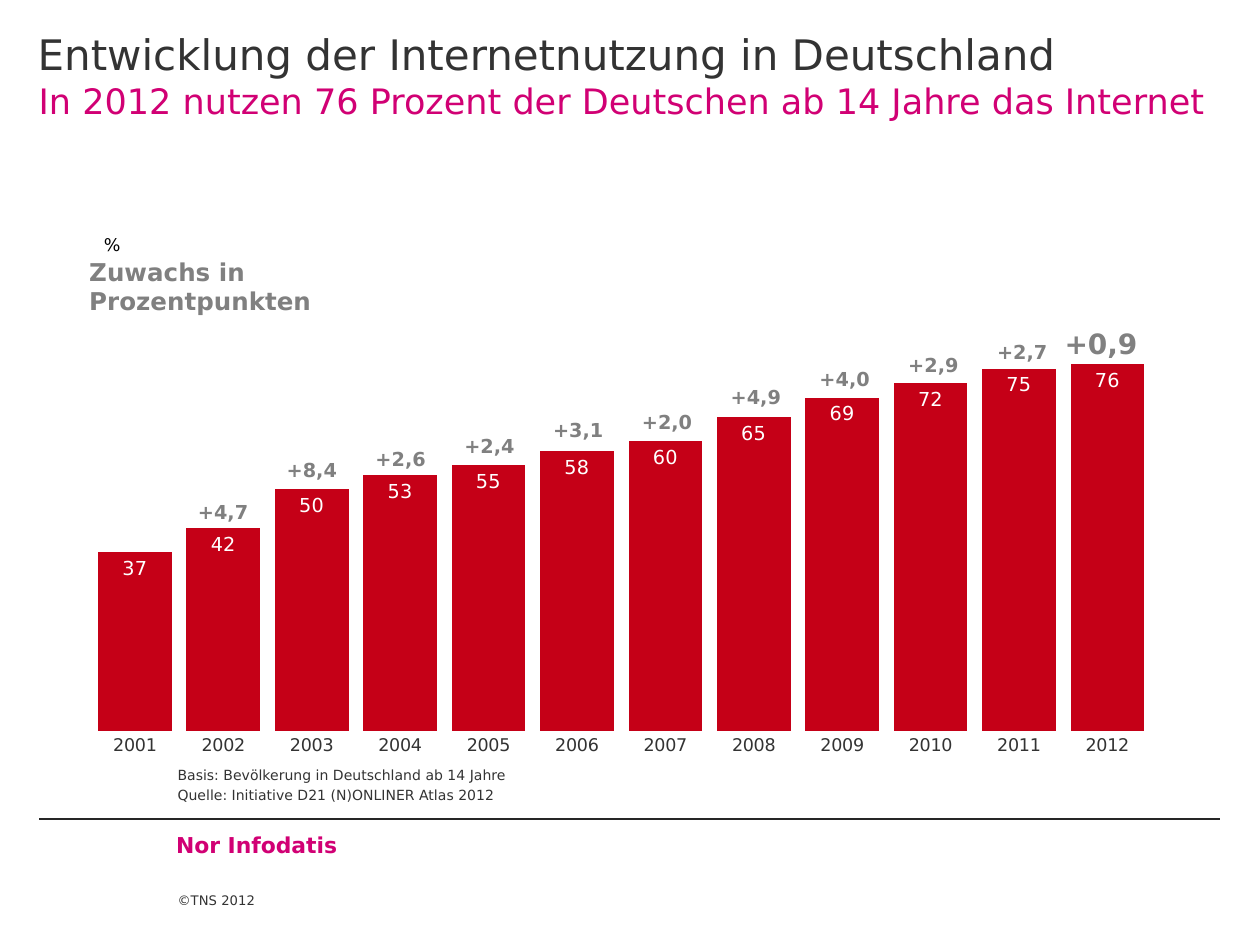
from dataclasses import dataclass

from lxml.etree import SubElement
from pptx import Presentation
from pptx.chart.data import CategoryChartData
from pptx.dml.color import RGBColor
from pptx.enum.chart import XL_CHART_TYPE, XL_LABEL_POSITION, XL_TICK_LABEL_POSITION, XL_TICK_MARK
from pptx.enum.shapes import MSO_CONNECTOR
from pptx.enum.text import MSO_ANCHOR, MSO_AUTO_SIZE
from pptx.oxml import parse_xml
from pptx.oxml.ns import nsdecls, qn
from pptx.slide import Slide
from pptx.text.text import Font
from pptx.util import Cm, Pt

FONT = "DejaVu Sans"
COLORS = {
    "text": "333333",
    "accent": "D10074",
    "bar": "C50017",
    "growth": "808080",
    "rule": "262626",
    "unit": "000000",
    "value": "FFFFFF",
}
USAGE = {
    "2001": 37, "2002": 42, "2003": 50, "2004": 53, "2005": 55, "2006": 58,
    "2007": 60, "2008": 65, "2009": 69, "2010": 72, "2011": 75, "2012": 76,
}
GROWTH_LEFT, GROWTH_STEP = 3.71, 1.79
GROWTH_INSETS = (0.28, 0.15, 0.28, 0.15)
HEADING_INSETS = (0.76, 0.58, 0.76, 0)


@dataclass
class TextBlock:
    """Lines of one style; the box and insets (left, top, right, bottom) are in cm."""
    lines: tuple[str, ...]
    box: tuple[float, float, float, float]
    size: float
    color: str = "text"
    bold: bool = False
    insets: tuple[float, float, float, float] = (0.25, 0.13, 0.25, 0.13)
    anchor: MSO_ANCHOR = MSO_ANCHOR.TOP
    wrap: bool = True
    line_gap: float = 0


@dataclass
class Growth:
    """Gain over the previous year and the top of its label in cm."""
    gain: str
    top: float


GROWTHS = (
    Growth("+4,7", 9.93), Growth("+8,4", 9.09), Growth("+2,6", 8.86),
    Growth("+2,4", 8.61), Growth("+3,1", 8.28), Growth("+2,0", 8.13),
    Growth("+4,9", 7.62), Growth("+4,0", 7.26), Growth("+2,9", 6.98),
    Growth("+2,7", 6.71),
)
TEXTS = (
    TextBlock(("Entwicklung der Internetnutzung in Deutschland",),
              (0, 0, 25.4, 2.87), 24, insets=HEADING_INSETS),
    TextBlock(("In 2012 nutzen 76 Prozent der Deutschen ab 14 Jahre das Internet",),
              (0.02, 1.02, 25.4, 1.85), 20, "accent", insets=HEADING_INSETS),
    TextBlock(("Zuwachs in", "Prozentpunkten"),
              (1.55, 5.05, 4.98, 1.45), 14, "growth", True, wrap=False),
    TextBlock(("+0,9",), (21.18, 6.43, 2.08, 0.97), 16, "growth", True,
              GROWTH_INSETS, wrap=False),
    TextBlock(("Basis: Bevölkerung in Deutschland ab 14 Jahre",
               "Quelle: Initiative D21 (N)ONLINER Atlas 2012"),
              (3.58, 15.47, 21, 1.02), 8, insets=(0, 0, 0, 0.3),
              anchor=MSO_ANCHOR.BOTTOM, line_gap=1.6),
    TextBlock(("Nor Infodatis",), (2.18, 16.51, 20.98, 1.04), 12.5, "accent", True,
              insets=(1.37, 0.25, 0.25, 0.13)),
    TextBlock(("©TNS 2012",), (3.58, 17.58, 2.11, 1.47), 7.5,
              insets=(0, 0, 0, 0.74), anchor=MSO_ANCHOR.BOTTOM),
)


def rgb(name: str) -> RGBColor:
    return RGBColor.from_string(COLORS[name])


def style_font(font: Font, size: float, color: str, bold: bool = False) -> None:
    font.name = FONT
    font.size = Pt(size)
    font.bold = bold
    font.color.rgb = rgb(color)


def add_text(slide: Slide, block: TextBlock) -> None:
    frame = slide.shapes.add_textbox(*map(Cm, block.box)).text_frame
    frame.word_wrap = block.wrap
    frame.auto_size = MSO_AUTO_SIZE.NONE if block.wrap else MSO_AUTO_SIZE.SHAPE_TO_FIT_TEXT
    frame.vertical_anchor = block.anchor
    (frame.margin_left, frame.margin_top,
     frame.margin_right, frame.margin_bottom) = map(Cm, block.insets)
    for index, line in enumerate(block.lines):
        paragraph = frame.paragraphs[0] if index == 0 else frame.add_paragraph()
        paragraph.text = line
        style_font(paragraph.font, block.size, block.color, block.bold)
        if index and block.line_gap:
            paragraph.space_before = Pt(block.line_gap)


def manual_layout(x: float, y: float, size: tuple[float, float] | None = None):
    """Layout in fractions of the chart; a size makes it an inner plot area."""
    values = {"layoutTarget": "inner"} if size else {}
    values |= {"xMode": "edge", "yMode": "edge", "x": x, "y": y}
    if size:
        values |= {"w": size[0], "h": size[1]}
    fields = "".join(f'<c:{tag} val="{value}"/>' for tag, value in values.items())
    return parse_xml(f'<c:layout {nsdecls("c")}><c:manualLayout>{fields}'
                     '</c:manualLayout></c:layout>')


def add_usage_chart(slide: Slide) -> None:
    data = CategoryChartData(number_format="#,##0")
    data.categories = list(USAGE)
    data.add_series("Series 1", list(USAGE.values()))
    chart = slide.shapes.add_chart(XL_CHART_TYPE.COLUMN_CLUSTERED, Cm(0), Cm(2.87),
                                   Cm(25.4), Cm(13.64), data).chart
    chart.has_legend = False
    chart.has_title = False
    style_font(chart.font, 18, "unit")

    years, percent = chart.category_axis, chart.value_axis
    for axis in (years, percent):
        axis.major_tick_mark = axis.minor_tick_mark = XL_TICK_MARK.NONE
        axis.has_major_gridlines = False
        axis.format.line.fill.background()
    style_font(years.tick_labels.font, 10, "text")
    percent.minimum_scale, percent.maximum_scale = 0, 100
    percent.tick_label_position = XL_TICK_LABEL_POSITION.NONE

    unit = percent.axis_title
    unit.text_frame.text = "%"
    style_font(unit.text_frame.paragraphs[0].font, 10, "unit")
    unit.text_frame._txBody.bodyPr.set("rot", "0")
    title = unit._element
    for layout in title.findall(qn("c:layout")):
        title.remove(layout)
    title.find(qn("c:tx")).addnext(manual_layout(0.08, 0.13))

    plot = chart.plots[0]
    plot.gap_width = 20
    plot.vary_by_categories = False
    bars = plot.series[0]
    bars.format.fill.solid()
    bars.format.fill.fore_color.rgb = rgb("bar")
    labels = bars.data_labels
    labels.show_value = True
    labels.position = XL_LABEL_POSITION.INSIDE_END
    labels.number_format, labels.number_format_is_linked = "#,##0", False
    style_font(labels.font, 11, "value")

    plot_area = chart._chartSpace.chart.plotArea
    for layout in plot_area.findall(qn("c:layout")):
        plot_area.remove(layout)
    plot_area.insert(0, manual_layout(0.072, 0.156, (0.842, 0.714)))


def add_footer_rule(slide: Slide) -> None:
    rule = slide.shapes.add_connector(MSO_CONNECTOR.STRAIGHT,
                                      Cm(0.79), Cm(16.51), Cm(24.59), Cm(16.51))
    rule.line.color.rgb = rgb("rule")
    rule.line.width = Pt(0.75)
    SubElement(rule._element.spPr, qn("a:effectLst"))


def main() -> None:
    presentation = Presentation()
    presentation.slide_width, presentation.slide_height = Cm(25.4), Cm(19.05)
    slide = presentation.slides.add_slide(presentation.slide_layouts[6])
    add_footer_rule(slide)
    add_usage_chart(slide)
    for block in TEXTS:
        add_text(slide, block)
    for index, growth in enumerate(GROWTHS):
        box = (GROWTH_LEFT + index * GROWTH_STEP, growth.top, 1.63, 0.76)
        add_text(slide, TextBlock((growth.gain,), box, 11, "growth", True,
                                  GROWTH_INSETS, wrap=False))
    presentation.save("out.pptx")


if __name__ == "__main__":
    main()
